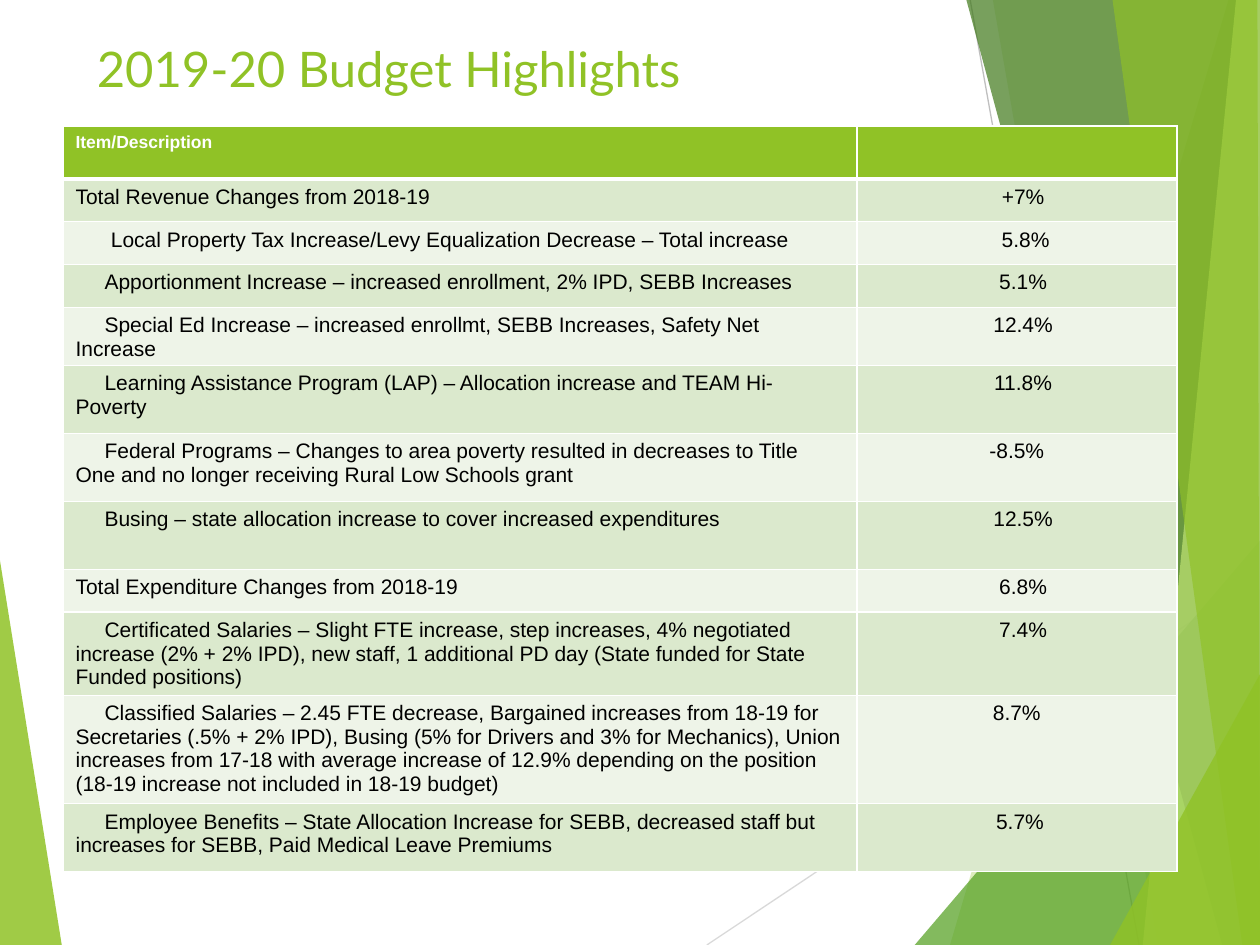
from lxml import etree
from pptx import Presentation
from pptx.dml.color import RGBColor
from pptx.enum.shapes import MSO_CONNECTOR
from pptx.enum.text import MSO_ANCHOR, PP_ALIGN
from pptx.oxml.ns import qn
from pptx.util import Inches, Pt

STRAIGHT = MSO_CONNECTOR.STRAIGHT
MIDDLE = MSO_ANCHOR.MIDDLE
LEFT, CENTER = PP_ALIGN.LEFT, PP_ALIGN.CENTER

COLORS = {
    "lime": "90C226", "green": "54A021", "forest": "3F7819", "pale": "C0E474",
    "band": "DBE9CD", "light": "EEF4E8", "white": "FFFFFF", "black": "000000",
    "gray": "BFBFBF", "light gray": "D9D9D9",
}

# start, end, color
RULES = [
    ((5.61, 7.5), (10, 4.57), "light gray"),
    ((7.7, 0), (9.04, 7.5), "gray"),
]

# color, opacity in percent, corners
LEFT_WEDGE = ("lime", 85, [(0, 4.45), (0.49, 7.5), (0, 7.5)])
RIGHT_FACETS = [
    ("lime", 30, [(9.75, 0), (7.54, 7.5), (10, 7.5), (10, 0)]),
    ("lime", 20, [(7.88, 0), (9.19, 7.5), (10, 7.5), (10, 0)]),
    ("green", 72, [(7.26, 7.5), (10, 4.29), (10, 7.5)]),
    ("forest", 70, [(7.67, 0), (9.7, 7.5), (10, 7.5), (10, 0)]),
    ("pale", 70, [(9.81, 0), (9.07, 7.5), (10, 7.5), (10, 0)]),
    ("lime", 65, [(8.83, 0), (9.86, 7.5), (10, 7.5), (9.98, 0)]),
    ("lime", 80, [(8.81, 7.5), (10, 5.35), (10, 7.5)]),
]

COLUMN_WIDTHS = [6.3, 2.54]
HEADER_HEIGHT = 0.42
DETAIL = 0.23  # first-line indent of a detail row

# height, first-line indent, description, change, shift of the change
ROWS = [
    (0.34, 0, "Total Revenue Changes from 2018-19", "+7%", 0.1),
    (0.34, 0.28, "Local Property Tax Increase/Levy Equalization Decrease – "
     "Total increase", "5.8%", 0.14),
    (0.34, DETAIL, "Apportionment Increase – increased enrollment, 2% IPD, "
     "SEBB Increases", "5.1%", 0.1),
    (0.43, DETAIL, "Special Ed Increase – increased enrollmt, SEBB Increases, "
     "Safety Net Increase", "12.4%", 0.1),
    (0.54, DETAIL, "Learning Assistance Program (LAP) – Allocation increase "
     "and TEAM Hi-Poverty", "11.8%", 0.1),
    (0.54, DETAIL, "Federal Programs – Changes to area poverty resulted in "
     "decreases to Title One and no longer receiving Rural Low Schools grant",
     "-8.5%", 0),
    (0.54, DETAIL, "Busing – state allocation increase to cover increased "
     "expenditures", "12.5%", 0.1),
    (0.34, 0, "Total Expenditure Changes from 2018-19", "6.8%", 0.1),
    (0.34, DETAIL, "Certificated Salaries – Slight FTE increase, step "
     "increases, 4% negotiated increase (2% + 2% IPD), new staff, 1 "
     "additional PD day (State funded for State Funded positions)",
     "7.4%", 0.1),
    (0.34, DETAIL, "Classified Salaries – 2.45 FTE decrease, Bargained "
     "increases from 18-19 for Secretaries (.5% + 2% IPD), Busing (5% for "
     "Drivers and 3% for Mechanics), Union increases from 17-18 with average "
     "increase of 12.9% depending on the position (18-19 increase not "
     "included in 18-19 budget)", "8.7%", 0),
    (0.54, DETAIL, "Employee Benefits – State Allocation Increase for SEBB, "
     "decreased staff but increases for SEBB, Paid Medical Leave Premiums",
     "5.7%", 0.05),
]


class SlideBuilder:
    title_font, body_font = "Lato", "Arial"

    def __init__(self, page):
        self.page = page

    def color(self, name):
        return RGBColor.from_string(COLORS[name])

    def facet(self, color, opacity, corners):
        points = [(Inches(x), Inches(y)) for x, y in corners]
        builder = self.page.shapes.build_freeform(*points[0])
        builder.add_line_segments(points[1:], close=True)
        shape = builder.convert_to_shape()
        shape.shadow.inherit = False
        shape.line.fill.background()
        shape.fill.solid()
        shape.fill.fore_color.rgb = self.color(color)
        tint = shape._element.spPr.find(qn("a:solidFill"))[0]
        etree.SubElement(tint, qn("a:alpha"), val=str(opacity * 1000))

    def rule(self, start, end, color):
        line = self.page.shapes.add_connector(
            STRAIGHT, *(Inches(value) for value in start + end))
        line.line.color.rgb = self.color(color)
        line.line.width = Pt(0.75)
        etree.SubElement(line._element.spPr, qn("a:effectLst"))

    def span(self, para, text, size, font, color, bold=False):
        span = para.add_run()
        span.text = text
        span.font.size, span.font.name, span.font.bold = Pt(size), font, bold
        span.font.color.rgb = self.color(color)

    def title(self, text):
        box = self.page.shapes.add_textbox(
            Inches(0.67), Inches(0.25), Inches(8.92), Inches(0.58))
        frame = box.text_frame
        frame.word_wrap = True
        frame.vertical_anchor = MIDDLE
        self.span(frame.paragraphs[0], text, 28, self.title_font, "lime")

    def cell(self, cell, fill, top=1, bottom=1):
        """Fill a cell and give it white borders, widths in points."""
        cell.fill.solid()
        cell.fill.fore_color.rgb = self.color(fill)
        properties = cell._tc.get_or_add_tcPr()
        widths = {"lnL": 1, "lnR": 1, "lnT": top, "lnB": bottom}
        for place, (side, width) in enumerate(widths.items()):
            border = etree.Element(qn(f"a:{side}"), w=str(Pt(width)))
            solid = etree.SubElement(border, qn("a:solidFill"))
            etree.SubElement(solid, qn("a:srgbClr"), val=COLORS["white"])
            properties.insert(place, border)

    def cell_text(self, cell, text, align=LEFT, indent=0, shift=0):
        para = cell.text_frame.paragraphs[0]
        para.alignment = align
        para._p.get_or_add_pPr().set("indent", str(Inches(indent)))
        cell.margin_left = Inches(0.1 + shift)
        cell.margin_bottom = Inches(0.01)
        self.span(para, text, 12, self.body_font, "black")

    def table(self, header, rows):
        heights = [HEADER_HEIGHT] + [row[0] for row in rows]
        table = self.page.shapes.add_table(
            len(heights), len(COLUMN_WIDTHS), Inches(0.5), Inches(1),
            Inches(sum(COLUMN_WIDTHS)), Inches(sum(heights))).table
        for column, width in zip(table.columns, COLUMN_WIDTHS):
            column.width = Inches(width)
        for row, height in zip(table.rows, heights):
            row.height = Inches(height)

        for cell in table.rows[0].cells:
            self.cell(cell, "lime", bottom=3)
        self.span(table.cell(0, 0).text_frame.paragraphs[0], header, 10,
                  self.body_font, "white", bold=True)

        for number, (_, indent, item, change, shift) in enumerate(rows, 1):
            item_cell, change_cell = table.rows[number].cells
            for cell in (item_cell, change_cell):
                self.cell(cell, "band" if number % 2 else "light",
                          top=3 if number == 1 else 1)
            self.cell_text(item_cell, item, indent=indent)
            self.cell_text(change_cell, change, CENTER, shift=shift)


def main():
    deck = Presentation()
    deck.slide_width, deck.slide_height = Inches(10), Inches(7.5)
    builder = SlideBuilder(deck.slides.add_slide(deck.slide_layouts[6]))
    builder.facet(*LEFT_WEDGE)
    for rule in RULES:
        builder.rule(*rule)
    for facet in RIGHT_FACETS:
        builder.facet(*facet)
    builder.title("2019-20 Budget Highlights")
    builder.table("Item/Description", ROWS)
    deck.save("out.pptx")


if __name__ == "__main__":
    main()
